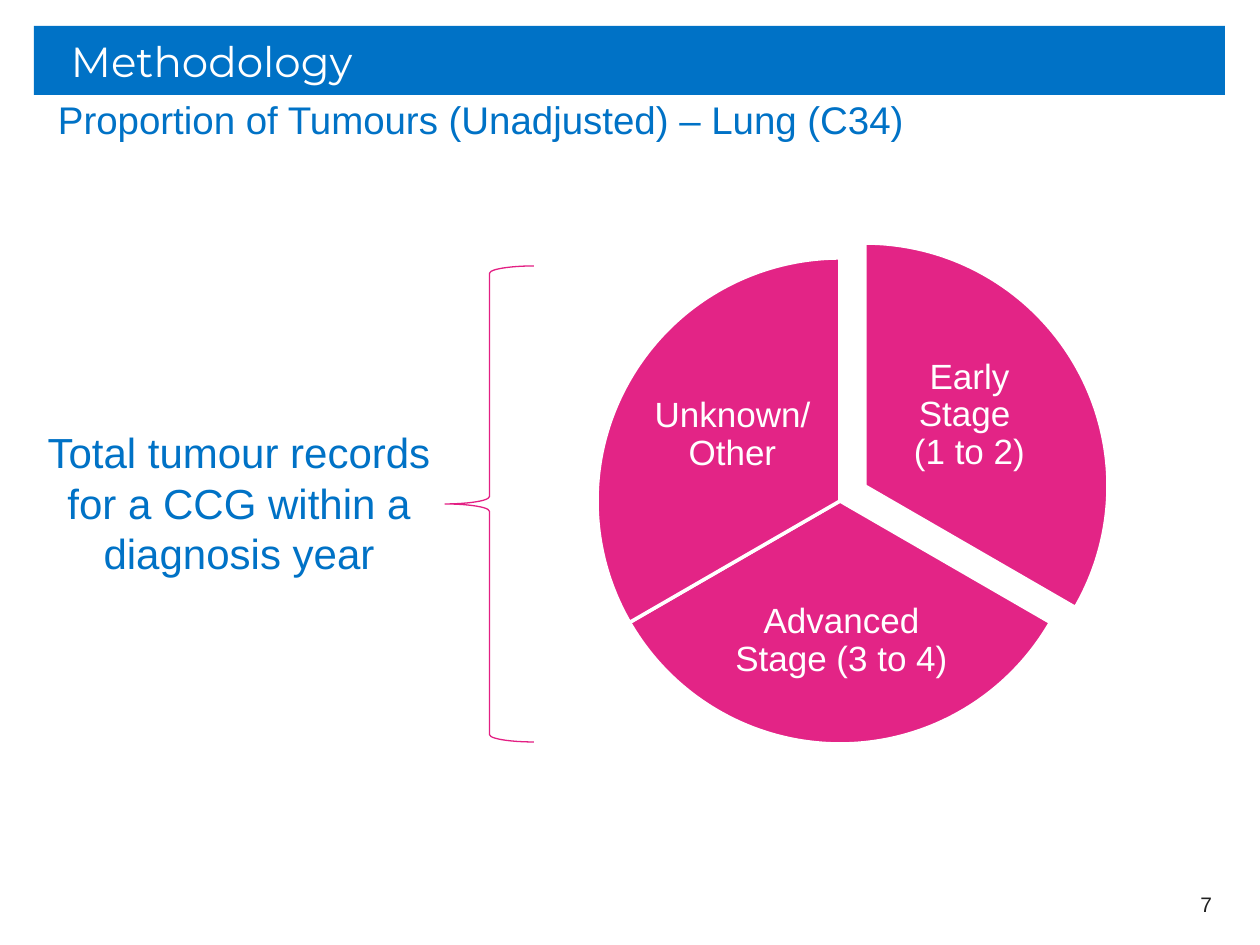
"""Build the Methodology slide: tumour records split by stage."""
import pptx
import pptx.util
from pptx.dml.color import RGBColor
from pptx.enum.shapes import MSO_SHAPE
from pptx.enum.text import MSO_ANCHOR, PP_ALIGN

EMU_PER_PX = 914400 / 126
BLUE, PINK, BRACE_PINK, WHITE, DARK = "0072C6", "E32486", "E31F83", "FFFFFF", "202020"

HEADING = "Methodology"
SUBHEADING = "Proportion of Tumours (Unadjusted) – Lung (C34)"
TOTAL = "Total tumour records for a CCG within a diagnosis year"
PAGE_NUMBER = "7"
PIE_LEFT, PIE_TOP, PIE_SIZE = 597, 258, 486
FIRST_ANGLE = 270
STAGES = [
    ("Early Stage \v(1 to 2)", (25, -15), (887, 334, 165, 163)),
    ("Advanced Stage (3 to 4)", (0, 0), (731, 566, 221, 151)),
    ("Unknown/ Other", (0, 0), (650, 354, 165, 163)),
]


def px(length):
    return pptx.util.Emu(round(length * EMU_PER_PX))


def color(hex_string):
    return RGBColor.from_string(hex_string)


def place(shape, box):
    shape.left, shape.top, shape.width, shape.height = map(px, box)


def write(shape, text, size, hex_string, align=PP_ALIGN.LEFT, anchor=MSO_ANCHOR.TOP,
          margins=(13, 6, 13, 6), font="Arial", line_spacing=None):
    frame = shape.text_frame
    frame.word_wrap = True
    frame.vertical_anchor = anchor
    frame.margin_left, frame.margin_top, frame.margin_right, frame.margin_bottom = map(px, margins)
    frame.text = text
    paragraph = frame.paragraphs[0]
    paragraph.alignment = align
    paragraph.line_spacing = line_spacing
    for run in paragraph.runs:
        run.font.name = font
        run.font.size = pptx.util.Pt(size)
        run.font.color.rgb = color(hex_string)


def add_text(slide, box, *args, **options):
    write(slide.shapes.add_textbox(*map(px, box)), *args, **options)


def add_outline(slide, kind, box, line, width):
    shape = slide.shapes.add_shape(kind, *map(px, box))
    shape.shadow.inherit = False
    shape.line.color.rgb = color(line)
    shape.line.width = pptx.util.Pt(width)
    return shape


def add_pie(slide):
    sweep = 360 / len(STAGES)
    for index, (label, (dx, dy), label_box) in enumerate(STAGES):
        start = FIRST_ANGLE + index * sweep
        box = (PIE_LEFT + dx, PIE_TOP + dy, PIE_SIZE, PIE_SIZE)
        slice_shape = add_outline(slide, MSO_SHAPE.PIE, box, WHITE, 2)
        slice_shape.fill.solid()
        slice_shape.fill.fore_color.rgb = color(PINK)
        for side, angle in enumerate((start, start + sweep)):
            slice_shape.adjustments[side] = angle % 360 * 0.6
        add_text(slide, label_box, label, 20, WHITE, PP_ALIGN.CENTER, MSO_ANCHOR.MIDDLE,
                 margins=(4, 4, 4, 4), line_spacing=0.9)


def main():
    deck = pptx.Presentation()
    deck.slide_width, deck.slide_height = px(1260), px(945)
    slide = deck.slides.add_slide(deck.slide_layouts[5])

    title = slide.shapes.title
    place(title, (34, 26, 1191, 69))
    title.fill.solid()
    title.fill.fore_color.rgb = color(BLUE)
    write(title, HEADING, 24, WHITE, anchor=MSO_ANCHOR.MIDDLE,
          margins=(37, 6, 13, 6), font="Montserrat")

    add_text(slide, (34, 96, 1191, 59), SUBHEADING, 22, BLUE, margins=(24, 0, 0, 0))
    add_text(slide, (931, 879, 294, 50), PAGE_NUMBER, 12, DARK, PP_ALIGN.RIGHT, MSO_ANCHOR.MIDDLE)
    add_pie(slide)
    brace = add_outline(slide, MSO_SHAPE.LEFT_BRACE, (445, 266, 89, 476), BRACE_PINK, 0.75)
    brace.fill.background()
    add_text(slide, (34, 421, 410, 165), TOTAL, 24, BLUE, PP_ALIGN.CENTER)

    deck.save("out.pptx")


if __name__ == "__main__":
    main()
